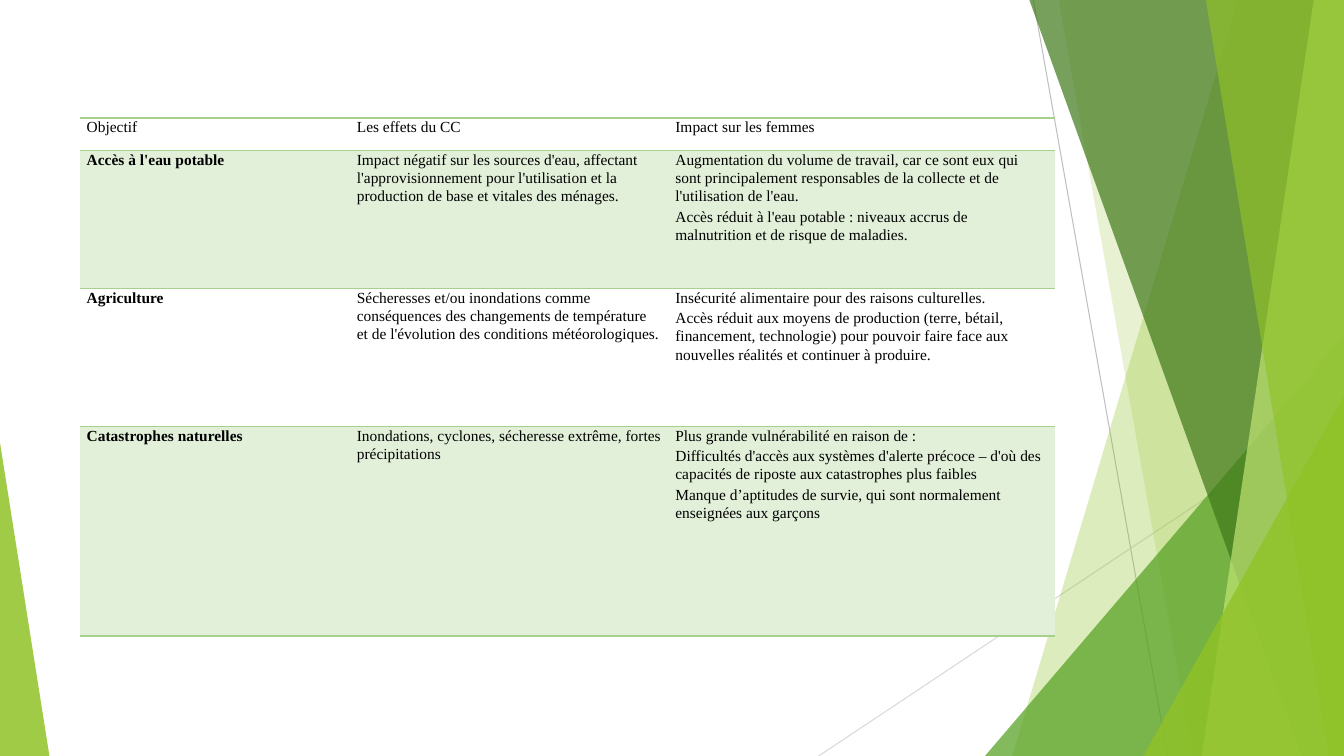
"""Build a slide with a table on climate effects and women, framed by green facets."""
from lxml.etree import SubElement
from pptx import Presentation
from pptx.dml.color import RGBColor as Rgb
from pptx.enum.shapes import MSO_CONNECTOR as Connector, MSO_SHAPE as Preset
from pptx.oxml import parse_xml
from pptx.oxml.ns import nsdecls, qn
from pptx.util import Emu, Inches, Pt

COLOURS = {
    "leaf": "90C226", "grass": "54A021", "forest": "3F7819", "lime": "C0E474",
    "grey": "BFBFBF", "pale grey": "D9D9D9",
    "text": "000000", "band": "E2EFD9", "rule": "A8D08D",
}

presentation = Presentation()
presentation.slide_width, presentation.slide_height = Inches(13.33), Inches(7.5)
slide = presentation.slides.add_slide(presentation.slide_layouts[6])


def across(percent):
    return Emu(round(presentation.slide_width * percent / 100))


def down(percent):
    return Emu(round(presentation.slide_height * percent / 100))


hairlines = [((76.89, 0), (86.87, 100), "grey"), ((100, 53.73), (60.92, 100), "pale grey")]
for (start_x, start_y), (end_x, end_y), colour in hairlines:
    line = slide.shapes.add_connector(
        Connector.STRAIGHT, across(start_x), down(start_y), across(end_x), down(end_y))
    line.line.color.rgb = Rgb.from_string(COLOURS[colour])
    line.line.width = Pt(0.75)
    SubElement(line._element.spPr, qn("a:effectLst"))

# kind, then top-left and bottom-left (band) or left, top, right, apex (triangle)
facets = [
    ("band", (92.12, 75.32), "leaf", 30),
    ("band", (78.77, 88.75), "leaf", 20),
    ("triangle", (73.29, 44.4, 100, 1), "grass", 72),
    ("band", (76.59, 96.85), "forest", 70),
    ("band", (97.75, 89.42), "lime", 70),
    ("band", (89.72, 98.87), "leaf", 65),
    ("triangle", (85.07, 52.4, 100, 1), "leaf", 80),
    ("triangle", (0, 58.53, 3.68, 0), "leaf", 85),
]
for kind, outline, colour, opacity in facets:
    if kind == "band":
        top_left, bottom_left = outline
        builder = slide.shapes.build_freeform(across(top_left), 0)
        corners = [(100, 0), (100, 100), (bottom_left, 100)]
        builder.add_line_segments([(across(x), down(y)) for x, y in corners], close=True)
        shape = builder.convert_to_shape()
    else:
        left, top, right, apex = outline
        shape = slide.shapes.add_shape(
            Preset.ISOSCELES_TRIANGLE, across(left), down(top),
            across(right - left), down(100 - top))
        shape.adjustments[0] = apex
    shape.shadow.inherit = False
    shape.line.fill.background()
    shape.fill.solid()
    shape.fill.fore_color.rgb = Rgb.from_string(COLOURS[colour])
    tint = shape._element.spPr.find(qn("a:solidFill")).find(qn("a:srgbClr"))
    SubElement(tint, qn("a:alpha"), val=str(opacity * 1000))

rows = [
    [["Objectif"], ["Les effets du CC"], ["Impact sur les femmes"]],
    [["Accès à l'eau potable"],
     ["Impact négatif sur les sources d'eau, affectant l'approvisionnement pour "
      "l'utilisation et la production de base et vitales des ménages."],
     ["Augmentation du volume de travail, car ce sont eux qui sont principalement "
      "responsables de la collecte et de l'utilisation de l'eau.",
      "Accès réduit à l'eau potable : niveaux accrus de malnutrition et de risque "
      "de maladies."]],
    [["Agriculture"],
     ["Sécheresses et/ou inondations comme conséquences des changements de "
      "température et de l'évolution des conditions météorologiques."],
     ["Insécurité alimentaire pour des raisons culturelles.",
      "Accès réduit aux moyens de production (terre, bétail, financement, "
      "technologie) pour pouvoir faire face aux nouvelles réalités et continuer "
      "à produire."]],
    [["Catastrophes naturelles"],
     ["Inondations, cyclones, sécheresse extrême, fortes précipitations"],
     ["Plus grande vulnérabilité en raison de :",
      "Difficultés d'accès aux systèmes d'alerte précoce – d'où des capacités de "
      "riposte aux catastrophes plus faibles",
      "Manque d’aptitudes de survie, qui sont normalement enseignées aux garçons"]],
]
column_widths = [20.1, 23.7, 28.8]
row_heights = [4.27, 18.27, 18.27, 27.73]
table = slide.shapes.add_table(
    len(rows), len(column_widths), across(5.93), down(15.6),
    across(sum(column_widths)), down(sum(row_heights))).table
table.first_row = table.horz_banding = False
for column, width in zip(table.columns, column_widths):
    column.width = across(width)
for row, height in zip(table.rows, row_heights):
    row.height = down(height)

no_line = "<a:noFill/>"
rule = f'<a:solidFill><a:srgbClr val="{COLOURS["rule"]}"/></a:solidFill>'
borders = [("lnL", no_line), ("lnR", no_line), ("lnT", rule), ("lnB", rule)]
for row_index, row in enumerate(rows):
    for column_index, texts in enumerate(row):
        cell = table.cell(row_index, column_index)
        cell.margin_left = cell.margin_right = Inches(0.07)
        cell.margin_top = cell.margin_bottom = 0
        if row_index % 2:
            cell.fill.solid()
            cell.fill.fore_color.rgb = Rgb.from_string(COLOURS["band"])
        else:
            cell.fill.background()
        properties = cell._tc.get_or_add_tcPr()
        for position, (side, paint) in enumerate(borders):
            properties.insert(position, parse_xml(
                f'<a:{side} {nsdecls("a")} w="{Pt(1)}">{paint}</a:{side}>'))
        for text_index, text in enumerate(texts):
            frame = cell.text_frame
            paragraph = frame.add_paragraph() if text_index else frame.paragraphs[0]
            paragraph.line_spacing = 1.07
            paragraph.space_after = Pt(1.4)
            run = paragraph.add_run()
            run.text = text
            run.font.name = "Times New Roman"
            run.font.size = Pt(11)
            run.font.bold = row_index > 0 and column_index == 0
            run.font.color.rgb = Rgb.from_string(COLOURS["text"])

presentation.save("out.pptx")
